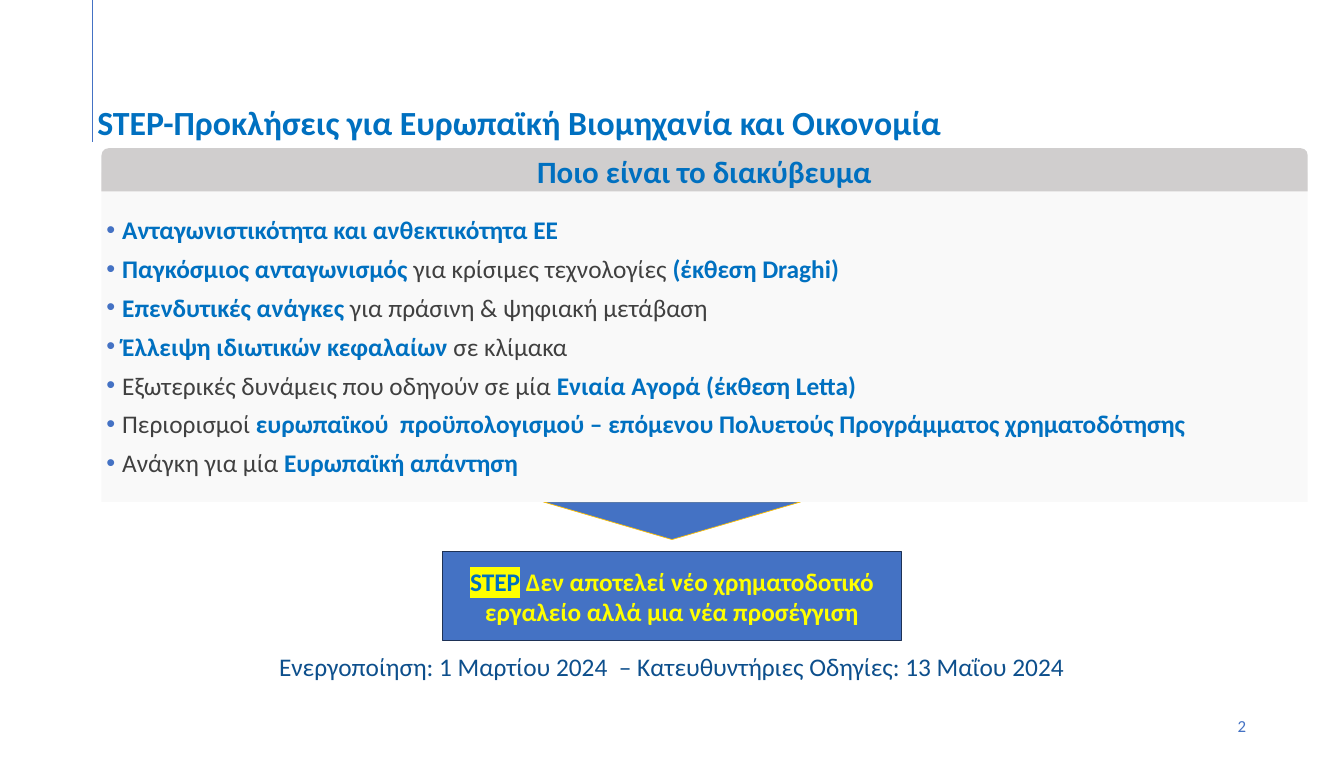
from lxml import etree
from pptx import Presentation
from pptx import util as u
from pptx.dml.color import RGBColor
from pptx.enum import shapes, text
from pptx.oxml.ns import qn

WIDTH, HEIGHT = u.Emu(24239538), u.Inches(15)
BLUE, ACCENT, GREY, YELLOW = "0070C0", "4472C4", "404040", "FFFF00"
KEY = {"size": 36, "bold": True, "color": BLUE}
PLAIN = {"size": 36, "bold": False, "color": GREY}
CENTER, MIDDLE = text.PP_ALIGN.CENTER, text.MSO_ANCHOR.MIDDLE

# Left edge and width shared by the stakes header and panel, in percent
PANEL_LEFT, PANEL_WIDTH = 7.55, 89.75
MARGIN = 6.87

STAKES = [
    [("Ανταγωνιστικότητα και ανθεκτικότητα\u00a0ΕΕ", KEY)],
    [("Παγκόσμιος ανταγωνισμός ", KEY), ("για κρίσιμες τεχνολογίες ", PLAIN),
     ("(έκθεση Draghi)", KEY)],
    [("Επενδυτικές ανάγκες ", KEY), ("για πράσινη & ψηφιακή μετάβαση", PLAIN)],
    [("Έλλειψη ιδιωτικών κεφαλαίων ", KEY), ("σε κλίμακα", PLAIN)],
    [("Εξωτερικές δυνάμεις που οδηγούν σε μία ", PLAIN),
     ("Ενιαία Αγορά (έκθεση Letta)", KEY)],
    [("Περιορισμοί ", PLAIN),
     ("ευρωπαϊκού  προϋπολογισμού – επόμενου Πολυετούς Προγράμματος χρηματοδότησης", KEY)],
    [("Ανάγκη για μία ", PLAIN), ("Ευρωπαϊκή απάντηση", KEY)],
]


def rgb(value):
    return RGBColor.from_string(value)


def across(percent):
    return u.Emu(round(WIDTH * percent / 100))


def down(percent):
    return u.Emu(round(HEIGHT * percent / 100))


def area(left, top, width, height):
    """Turn percentages of the slide into a position and size."""
    return across(left), down(top), across(width), down(height)


def centred(top, width, height):
    return area(50 - width / 2, top, width, height)


def set_format(target, values):
    for name, value in values.items():
        setattr(target, name, value)


def style_font(font, size, color, bold=False):
    set_format(font, {"name": "Calibri", "size": u.Pt(size), "bold": bold})
    font.color.rgb = rgb(color)


def add_runs(paragraph, runs):
    for words, style in runs:
        run = paragraph.add_run()
        run.text = words
        style_font(run.font, **style)


def highlight(run, color):
    mark = etree.Element(qn("a:highlight"))
    etree.SubElement(mark, qn("a:srgbClr"), val=color)
    run.font._element.find(qn("a:solidFill")).addnext(mark)


def add_bullet(paragraph):
    properties = paragraph._p.get_or_add_pPr()
    properties.set("marL", str(u.Inches(0.31)))
    properties.set("indent", str(u.Inches(-0.31)))
    color = etree.SubElement(properties, qn("a:buClr"))
    etree.SubElement(color, qn("a:srgbClr"), val=ACCENT)
    etree.SubElement(properties, qn("a:buFont"), typeface="Arial")
    etree.SubElement(properties, qn("a:buChar"), char="•")


def add_block(slide, preset, place, fill, line=None):
    block = slide.shapes.add_shape(preset, *place)
    block.shadow.inherit = False
    block.fill.solid()
    block.fill.fore_color.rgb = rgb(fill)
    if line:
        block.line.color.rgb = rgb(line)
        block.line.width = u.Pt(1)
    else:
        block.line.fill.background()
    return block


def write(shape, runs, align, anchor=text.MSO_ANCHOR.TOP):
    frame = shape.text_frame
    set_format(frame, {"word_wrap": True, "vertical_anchor": anchor,
                       "auto_size": text.MSO_AUTO_SIZE.NONE})
    paragraph = frame.paragraphs[0]
    paragraph.alignment = align
    add_runs(paragraph, runs)
    return paragraph


def add_margin_rule(slide):
    x = across(MARGIN)
    rule = slide.shapes.add_connector(shapes.MSO_CONNECTOR.STRAIGHT, x, 0, x, down(18.6))
    rule.line.color.rgb = rgb(ACCENT)
    rule.line.width = u.Pt(2.25)
    etree.SubElement(rule._element.spPr, qn("a:effectLst"))


def add_slide_number(slide):
    box = slide.shapes.add_textbox(*area(70.62, 92.7, 22.48, 5.33))
    write(box, [("2", {"size": 23.9, "color": ACCENT})], text.PP_ALIGN.RIGHT, MIDDLE)


def add_heading(slide):
    box = slide.shapes.add_textbox(*area(MARGIN, 13.6, PANEL_WIDTH, 71.27))
    words = "STEP-Προκλήσεις για Ευρωπαϊκή Βιομηχανία και Οικονομία"
    paragraph = write(box, [(words, {**KEY, "size": 48})], text.PP_ALIGN.LEFT)
    paragraph.line_spacing = 0.9


def place_title(slide):
    title = slide.shapes.title
    places = area(MARGIN, 85.67, 86.23, 4.4)
    set_format(title, dict(zip(("left", "top", "width", "height"), places)))
    words = "Ενεργοποίηση: 1 Μαρτίου 2024  – Κατευθυντήριες Οδηγίες: 13 Μαΐου 2024"
    paragraph = write(title, [(words, {"size": 36, "color": "0D4F8C"})], CENTER, MIDDLE)
    set_format(paragraph, {"line_spacing": 0.9, "space_before": u.Pt(0)})


def add_conclusion(slide):
    arrow = add_block(slide, shapes.MSO_SHAPE.ISOSCELES_TRIANGLE,
                      centred(65.95, 19.16, 4.95), ACCENT, "FFC000")
    arrow.rotation = 180
    callout = add_block(slide, shapes.MSO_SHAPE.RECTANGLE,
                        centred(72.5, 34.14, 11.67), ACCENT, "1E3256")
    message = " Δεν αποτελεί νέο χρηματοδοτικό εργαλείο αλλά μια νέα προσέγγιση"
    paragraph = write(callout, [("STEP", KEY),
                                (message, {**KEY, "size": 35.9, "color": YELLOW})],
                      CENTER, MIDDLE)
    highlight(paragraph.runs[0], YELLOW)


def add_stakes(slide):
    panel = add_block(slide, shapes.MSO_SHAPE.RECTANGLE,
                      area(PANEL_LEFT, 22.67, PANEL_WIDTH, 43.28), "F9F9F9")
    frame = panel.text_frame
    set_format(frame, {"word_wrap": True, "margin_top": u.Inches(0.82),
                       "vertical_anchor": text.MSO_ANCHOR.TOP})
    for index, runs in enumerate(STAKES):
        paragraph = frame.add_paragraph() if index else frame.paragraphs[0]
        add_bullet(paragraph)
        set_format(paragraph, {"alignment": text.PP_ALIGN.LEFT, "space_after": u.Pt(12)})
        add_runs(paragraph, runs)

    header = add_block(slide, shapes.MSO_SHAPE.ROUND_2_SAME_RECTANGLE,
                       area(PANEL_LEFT, 19.47, PANEL_WIDTH, 5.67), "D0CECE")
    write(header, [("Ποιο είναι το διακύβευμα", {**KEY, "size": 44})], CENTER)


def main():
    deck = Presentation()
    set_format(deck, {"slide_width": WIDTH, "slide_height": HEIGHT})
    slide = deck.slides.add_slide(deck.slide_layouts[5])
    add_margin_rule(slide)
    add_slide_number(slide)
    add_heading(slide)
    place_title(slide)
    add_conclusion(slide)
    add_stakes(slide)
    deck.save("out.pptx")


if __name__ == "__main__":
    main()
